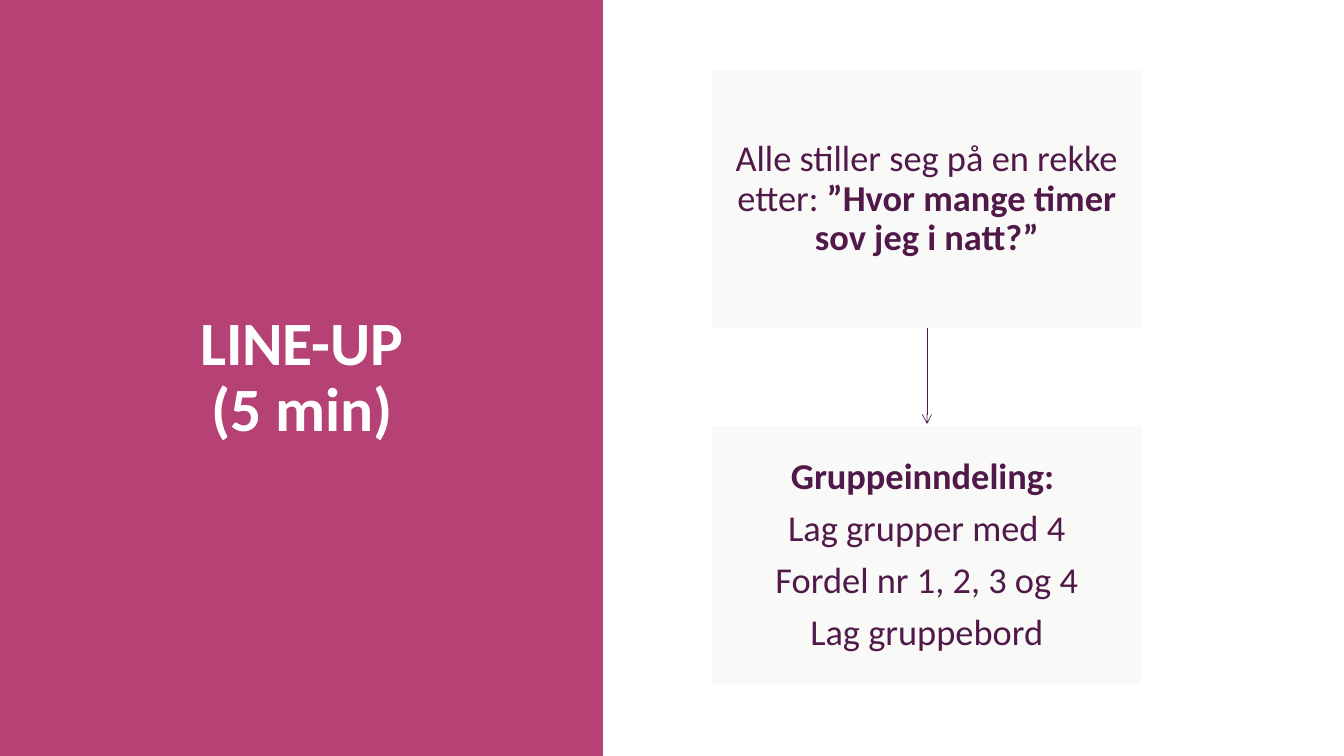
from pptx import Presentation as Deck
from pptx.dml.color import RGBColor as Rgb
from pptx.enum.shapes import MSO_CONNECTOR as Conn, MSO_SHAPE as Kind
from pptx.enum.text import MSO_ANCHOR as Anchor, MSO_AUTO_SIZE as Fit, PP_ALIGN as Align
from pptx.oxml.ns import qn
from pptx.util import Pt
from lxml.etree import SubElement as Sub

WIDE, HIGH = 1344, 756
SCALE = 12192000 / WIDE
HUES = {"panel": "B54175", "card": "F9F9F8", "ink": "511949", "white": "FFFFFF"}


def px(n):
    return round(n * SCALE)


def hue(name):
    return Rgb.from_string(HUES[name])


class Page:
    font = "Calibri"

    def __init__(self, deck):
        self.slide = deck.slides.add_slide(deck.slide_layouts[5])
        self.items = self.slide.shapes

    def words(self, frame, paras, size, color, after=0, pad=(10, 5)):
        frame.word_wrap = True
        frame.auto_size = Fit.NONE
        frame.vertical_anchor = Anchor.MIDDLE
        frame.margin_left = frame.margin_right = px(pad[0])
        frame.margin_top = frame.margin_bottom = px(pad[1])
        for i, runs in enumerate(paras):
            para = frame.add_paragraph() if i else frame.paragraphs[0]
            para.alignment = Align.CENTER
            para.line_spacing = 0.9
            para.space_before, para.space_after = Pt(0), Pt(after)
            for text, bold in runs:
                for j, line in enumerate(text.split("\n")):
                    if j:
                        para.add_line_break()
                    run = para.add_run()
                    run.text = line
                    font = run.font
                    font.name, font.size, font.bold = self.font, Pt(size), bold
                    font.color.rgb = hue(color)

    def rect(self, box, fill):
        shape = self.items.add_shape(Kind.RECTANGLE, *map(px, box))
        shape.shadow.inherit = False
        shape.fill.solid()
        shape.fill.fore_color.rgb = hue(fill)
        shape.line.fill.background()
        return shape

    def panel(self, box):
        shape = self.rect(box, "panel")
        self.items.title._element.addprevious(shape._element)

    def title(self, box, text):
        shape = self.items.title
        shape.left, shape.top, shape.width, shape.height = map(px, box)
        self.words(shape.text_frame, [[(text, True)]], 44, "white")

    def card(self, box, paras):
        shape = self.rect(box, "card")
        self.words(shape.text_frame, paras, 26, "ink", 9, (21, 22))
        return shape

    def arrow(self, card, x, top, end):
        link = self.items.add_connector(Conn.STRAIGHT, *map(px, (x, top, x, end)))
        link.begin_connect(card, 2)
        link.line.width = Pt(0.5)
        link.line.color.rgb = hue("ink")
        props = link._element.spPr
        Sub(props.find(qn("a:ln")), qn("a:tailEnd"), type="arrow")
        Sub(props, qn("a:effectLst"))


def main():
    deck = Deck()
    deck.slide_width, deck.slide_height = px(WIDE), px(HIGH)
    page = Page(deck)
    page.panel((0, 0, 603, HIGH))
    page.title((69, 71, 466, 615), "LINE-UP\n(5 min)")

    left, top, wide, high, step = 712, 71, 430, 257, 356
    steps = [
        [[("Alle stiller seg på en rekke etter: ", False),
          ("”Hvor mange timer sov jeg i natt?”", True)]],
        [[("Gruppeinndeling: ", True)],
         [("Lag grupper med 4", False)],
         [("Fordel nr 1, 2, 3 og 4", False)],
         [("Lag gruppebord", False)]],
    ]
    cards = [page.card((left, top + i * step, wide, high), paras)
             for i, paras in enumerate(steps)]
    page.arrow(cards[0], left + wide // 2, top + high, top + step - 3)
    deck.save("out.pptx")


if __name__ == "__main__":
    main()
